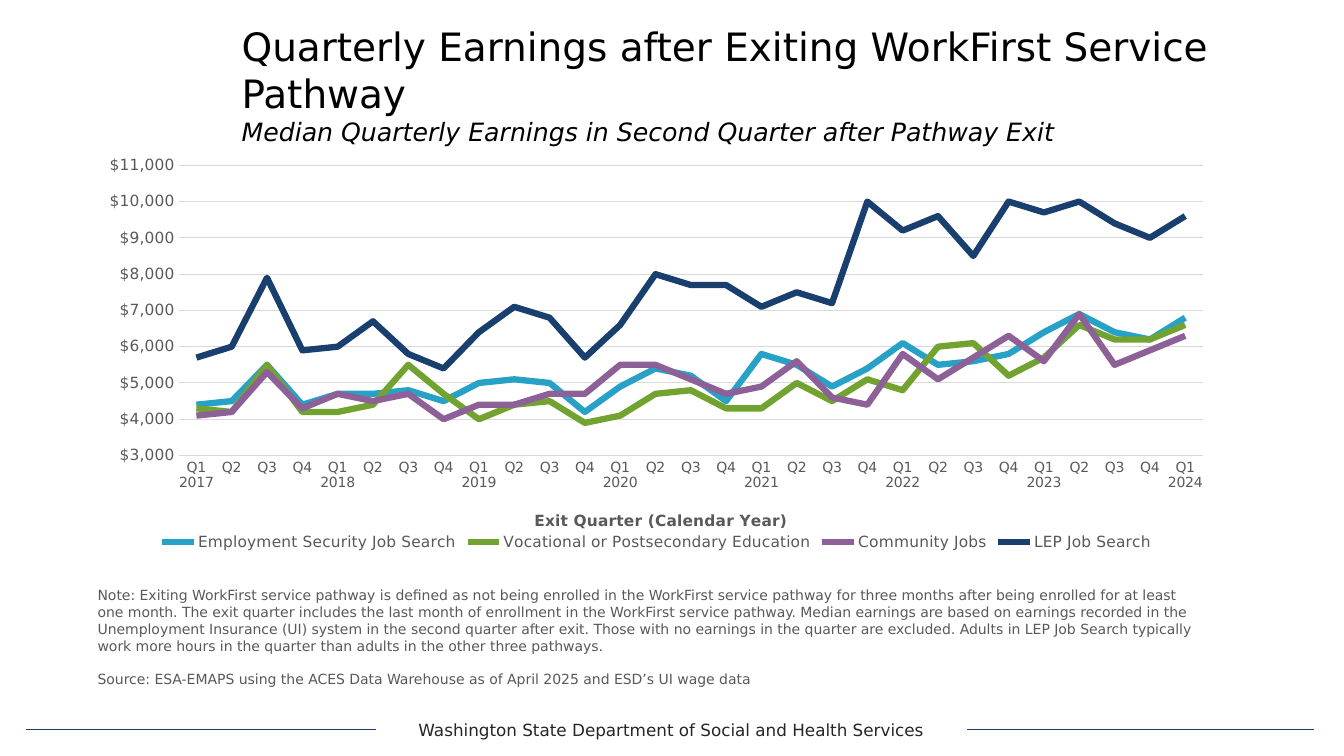
from lxml.etree import SubElement
from pptx import Presentation
from pptx.chart.data import CategoryChartData
from pptx.dml.color import RGBColor
from pptx.enum.chart import XL_CHART_TYPE, XL_LEGEND_POSITION, XL_TICK_MARK
from pptx.enum.shapes import MSO_CONNECTOR
from pptx.enum.text import MSO_ANCHOR, MSO_AUTO_SIZE, PP_ALIGN
from pptx.oxml import parse_xml
from pptx.oxml.ns import nsdecls, qn
from pptx.util import Cm, Pt

FACE = "DejaVu Sans"
BLACK = RGBColor(0x00, 0x00, 0x00)
INK = RGBColor(0x26, 0x26, 0x26)
GREY = RGBColor(0x59, 0x59, 0x59)
PALE = RGBColor(0xD9, 0xD9, 0xD9)
NAVY = RGBColor(0x19, 0x3F, 0x6F)
TEAL = RGBColor(0x27, 0xA1, 0xC6)
GREEN = RGBColor(0x72, 0xA3, 0x31)
PLUM = RGBColor(0x8D, 0x61, 0x98)

# Quarterly medians in hundreds of dollars
SERIES = [
    ("Employment Security Job Search", TEAL,
     [44, 45, 55, 44, 47, 47, 48, 45, 50, 51, 50, 42, 49, 54, 52,
      45, 58, 55, 49, 54, 61, 55, 56, 58, 64, 69, 64, 62, 68]),
    ("Vocational or Postsecondary Education", GREEN,
     [43, 42, 55, 42, 42, 44, 55, 47, 40, 44, 45, 39, 41, 47, 48,
      43, 43, 50, 45, 51, 48, 60, 61, 52, 57, 66, 62, 62, 66]),
    ("Community Jobs", PLUM,
     [41, 42, 53, 43, 47, 45, 47, 40, 44, 44, 47, 47, 55, 55, 51,
      47, 49, 56, 46, 44, 58, 51, 57, 63, 56, 69, 55, 59, 63]),
    ("LEP Job Search", NAVY,
     [57, 60, 79, 59, 60, 67, 58, 54, 64, 71, 68, 57, 66, 80, 77,
      77, 71, 75, 72, 100, 92, 96, 85, 100, 97, 100, 94, 90, 96]),
]
NOTE = (
    "Note: Exiting WorkFirst service pathway is defined as not being enrolled "
    "in the WorkFirst service pathway for three months after being enrolled "
    "for at least one month. The exit quarter includes the last month of "
    "enrollment in the WorkFirst service pathway. Median earnings are based on "
    "earnings recorded in the Unemployment Insurance (UI) system in the second "
    "quarter after exit. Those with no earnings in the quarter are excluded. "
    "Adults in LEP Job Search typically work more hours in the quarter than "
    "adults in the other three pathways."
)
SOURCE = ("Source: ESA-EMAPS using the ACES Data Warehouse as of April 2025 "
          "and ESD’s UI wage data")


def style(item, **values):
    for key, value in values.items():
        setattr(item, key, value)


def paint(font, size, color, **more):
    style(font, name=FACE, size=Pt(size), **more)
    font.color.rgb = color


def stroke(line, color, width):
    line.color.rgb = color
    line.width = Pt(width)


def write(slide, box, rows, **frame):
    """Add a text box; each row is text, size, color, font values, paragraph values."""
    shape = slide.shapes.add_textbox(*map(Cm, box))
    body = shape.text_frame
    style(body, word_wrap=True, **frame)
    for i, (text, size, color, font, para) in enumerate(rows):
        line = body.add_paragraph() if i else body.paragraphs[0]
        style(line, **para)
        run = line.add_run()
        run.text = text
        paint(run.font, size, color, **font)
    return shape


def arrange(node, index, inner=False, **place):
    """Place a chart part by fractions of the chart area."""
    for old in node.findall(qn("c:layout")):
        node.remove(old)
    layout = parse_xml(f"<c:layout {nsdecls('c')}><c:manualLayout/></c:layout>")
    if inner:
        SubElement(layout[0], qn("c:layoutTarget")).set("val", "inner")
    for key in "xy":
        SubElement(layout[0], qn(f"c:{key}Mode")).set("val", "edge")
    for key, value in place.items():
        SubElement(layout[0], qn(f"c:{key}")).set("val", str(value))
    node.insert(index, layout)


def add_title(slide, box):
    write(slide, box, [
        ("Quarterly Earnings after Exiting WorkFirst Service Pathway",
         27.9, BLACK, {}, {}),
        ("Median Quarterly Earnings in Second Quarter after Pathway Exit",
         18, BLACK, {"italic": True}, {}),
    ], vertical_anchor=MSO_ANCHOR.MIDDLE)


def add_plot(slide, box):
    data = CategoryChartData(number_format='"$"#,##0')
    data.categories = [f"Q{i % 4 + 1}" + ("" if i % 4 else f"\n{2017 + i // 4}")
                       for i in range(len(SERIES[0][2]))]
    for name, _, values in SERIES:
        data.add_series(name, [v * 100 for v in values])
    chart = slide.shapes.add_chart(
        XL_CHART_TYPE.LINE, *map(Cm, box), data).chart
    paint(chart.font, 10, BLACK)
    style(chart, has_title=False, has_legend=True)

    # Lines
    plot = chart.plots[0]
    plot.vary_by_categories = False
    for line, (_, color, _) in zip(plot.series, SERIES):
        line.smooth = False
        stroke(line.format.line, color, 4.5)

    # Axes
    cats, vals = chart.category_axis, chart.value_axis
    for axis, size in ((cats, 10), (vals, 11)):
        style(axis, major_tick_mark=XL_TICK_MARK.NONE,
              minor_tick_mark=XL_TICK_MARK.NONE)
        paint(axis.tick_labels.font, size, GREY)
    stroke(cats.format.line, PALE, 0.75)
    vals.format.line.fill.background()
    style(vals, minimum_scale=3000, maximum_scale=11000, major_unit=1000)
    style(vals.tick_labels, number_format='"$"#,##0',
          number_format_is_linked=False)
    stroke(vals.major_gridlines.format.line, PALE, 0.75)
    label = cats.axis_title.text_frame.paragraphs[0].add_run()
    label.text = "Exit Quarter (Calendar Year)"
    paint(label.font, 11, GREY, bold=True)

    # Legend and inner places
    key = chart.legend
    style(key, position=XL_LEGEND_POSITION.BOTTOM, include_in_layout=False)
    paint(key.font, 11, GREY)
    root = chart.element if hasattr(chart, "element") else chart._chartSpace
    area = root.find(".//" + qn("c:plotArea"))
    arrange(area, 0, inner=True, x=0.08, y=0.04, w=0.9, h=0.67)
    arrange(root.find(".//" + qn("c:legend")), 1, x=0.06, y=0.88, w=0.88, h=0.06)
    arrange(area.find(".//" + qn("c:title")), 1, x=0.39, y=0.83)


def add_note(slide, box):
    write(slide, box, [
        (NOTE, 10, GREY, {}, {}),
        (SOURCE, 10, GREY, {}, {"space_before": Pt(12)}),
    ], auto_size=MSO_AUTO_SIZE.SHAPE_TO_FIT_TEXT)


def add_footer(slide, box):
    left, top, width, height = box
    pad, mid = 8.81, top + height / 2
    name = write(slide, (left + pad, top, width - 2 * pad + 0.06, height), [
        ("Washington State Department of Social and Health Services",
         12, INK, {}, {"alignment": PP_ALIGN.CENTER}),
    ], auto_size=MSO_AUTO_SIZE.SHAPE_TO_FIT_TEXT)
    for edge, side in ((left, 1), (left + width, 3)):
        rule = slide.shapes.add_connector(
            MSO_CONNECTOR.STRAIGHT, Cm(edge), Cm(mid), Cm(edge), Cm(mid))
        rule.end_connect(name, side)
        stroke(rule.line, NAVY, 0.75)
        SubElement(rule._element.spPr, qn("a:effectLst"))


def main():
    deck = Presentation()
    style(deck, slide_width=Cm(33.87), slide_height=Cm(19.05))
    slide = deck.slides.add_slide(deck.slide_layouts[6])
    add_footer(slide, (0.66, 18.01, 32.46, 0.76))
    add_title(slide, (5.84, 0.3, 26.24, 3.68))
    add_plot(slide, (2.21, 3.73, 28.68, 10.92))
    add_note(slide, (2.21, 14.66, 28.35, 2.82))
    deck.save("out.pptx")


if __name__ == "__main__":
    main()
